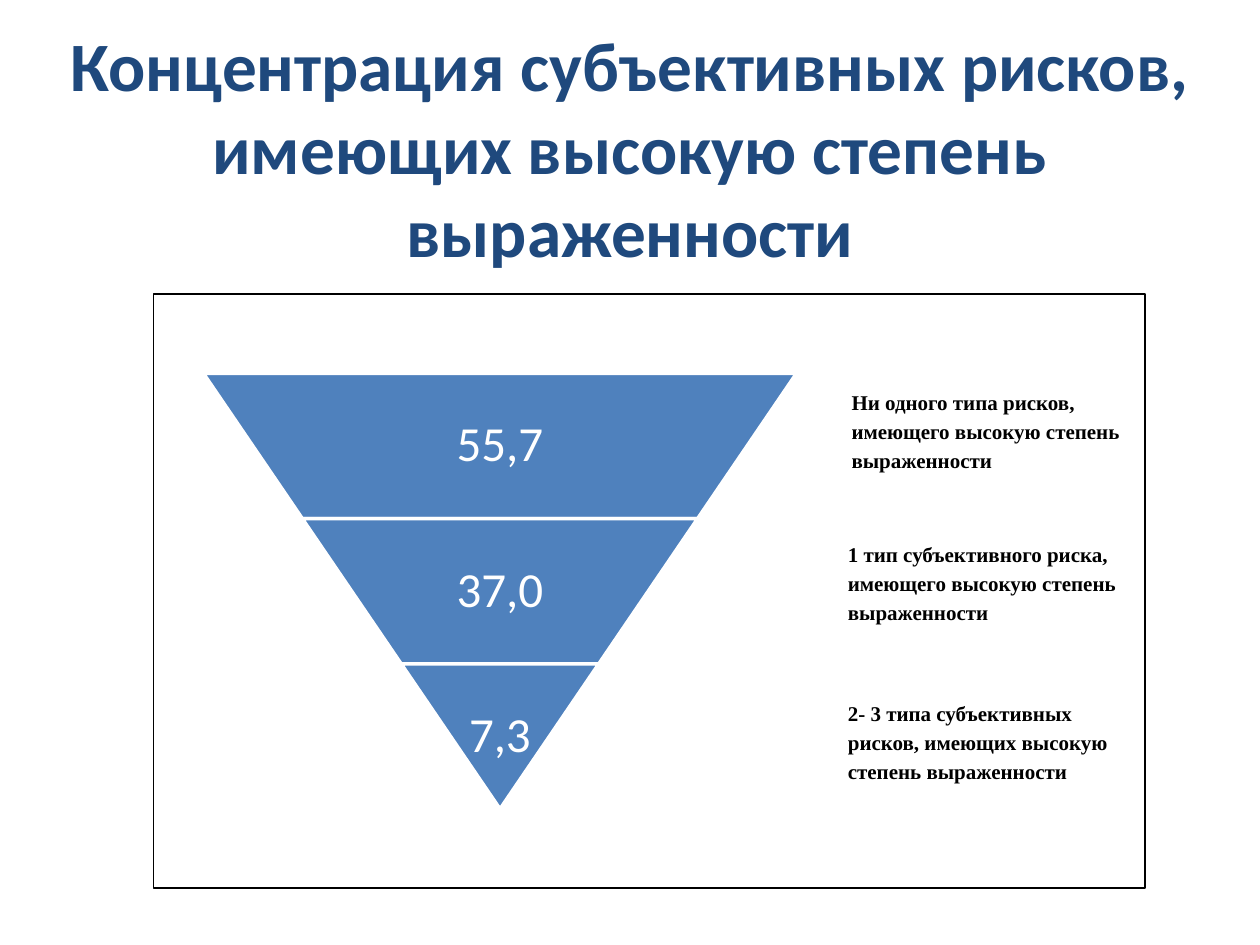
from pptx import Presentation
from pptx.dml.color import RGBColor
from pptx.enum.shapes import MSO_SHAPE
from pptx.enum.text import MSO_ANCHOR, PP_ALIGN
from pptx.util import Pt

COLORS = {"title": "1F497D", "funnel": "4F81BD", "white": "FFFFFF", "black": "000000"}
VALUES = ["55,7", "37,0", "7,3"]
LABELS = [
    ("Ни одного типа рисков, имеющего высокую степень выраженности",
     (479.5, 216.7, 171.4, 75.6)),
    ("1 тип субъективного риска, имеющего высокую степень выраженности",
     (477.4, 303.8, 177.1, 92.2)),
    ("2- 3 типа субъективных рисков, имеющих высокую степень выраженности",
     (477.4, 394.6, 171.4, 103.7)),
]


def color(name):
    return RGBColor.from_string(COLORS[name])


def add_run(para, text, size, tone, font="Calibri", bold=False):
    run = para.add_run()
    run.text = text
    run.font.name = font
    run.font.size = Pt(size)
    run.font.bold = bold
    run.font.color.rgb = color(tone)


def add_block(slide, kind, box, fill=None, line=None, width=1):
    shape = slide.shapes.add_shape(kind, *map(Pt, box))
    shape.shadow.inherit = False
    if fill:
        shape.fill.solid()
        shape.fill.fore_color.rgb = color(fill)
    else:
        shape.fill.background()
    if line:
        shape.line.color.rgb = color(line)
        shape.line.width = Pt(width)
    else:
        shape.line.fill.background()
    return shape


def add_title(slide, box, text):
    title = slide.shapes.title
    title.left, title.top, title.width, title.height = map(Pt, box)
    frame = title.text_frame
    frame.word_wrap = True
    frame.vertical_anchor = MSO_ANCHOR.MIDDLE
    para = frame.paragraphs[0]
    para.alignment = PP_ALIGN.CENTER
    add_run(para, text, 39.6, "title", bold=True)


def add_value(slide, box, text):
    frame = slide.shapes.add_textbox(*map(Pt, box)).text_frame
    frame.word_wrap = True
    frame.vertical_anchor = MSO_ANCHOR.MIDDLE
    frame.margin_left = frame.margin_right = Pt(2.8)
    frame.margin_top = frame.margin_bottom = Pt(2.8)
    para = frame.paragraphs[0]
    para.alignment = PP_ALIGN.CENTER
    para.line_spacing = 0.9
    add_run(para, text, 28, "white")


def add_funnel(slide, box, values):
    """Cut a triangle that points down into bands of equal height."""
    left, top, width, height = box
    count = len(values)
    band = height / count
    inset = width / count / 2
    for i, value in enumerate(values):
        x, y, wide = left + i * inset, top + i * band, width - 2 * i * inset
        part = add_block(slide, MSO_SHAPE.TRAPEZOID, (x, y, wide, band),
                         "funnel", "white", 2)
        part.rotation = 180
        part.adjustments[0] = inset / min(wide, band)
        room = wide if i == count - 1 else wide * 0.65
        add_value(slide, (x + (wide - room) / 2, y, room, band), value)


def add_label(slide, box, text):
    frame = add_block(slide, MSO_SHAPE.RECTANGLE, box, "white").text_frame
    frame.word_wrap = True
    frame.vertical_anchor = MSO_ANCHOR.TOP
    para = frame.paragraphs[0]
    para.alignment = PP_ALIGN.LEFT
    para.line_spacing = 1.15
    para.space_after = Pt(10)
    add_run(para, text, 12, "black", "Times New Roman", True)


def main():
    deck = Presentation()
    deck.slide_width, deck.slide_height = Pt(720), Pt(540)
    slide = deck.slides.add_slide(deck.slide_layouts[5])
    add_title(slide, (25.2, 38.9, 669.6, 90),
              "Концентрация субъективных рисков, имеющих высокую степень выраженности")
    add_funnel(slide, (116.2, 213.3, 339, 249), VALUES)
    for text, box in LABELS:
        add_label(slide, box, text)
    add_block(slide, MSO_SHAPE.RECTANGLE, (87.8, 167.8, 566.6, 339.8), line="black")
    deck.save("out.pptx")


if __name__ == "__main__":
    main()
